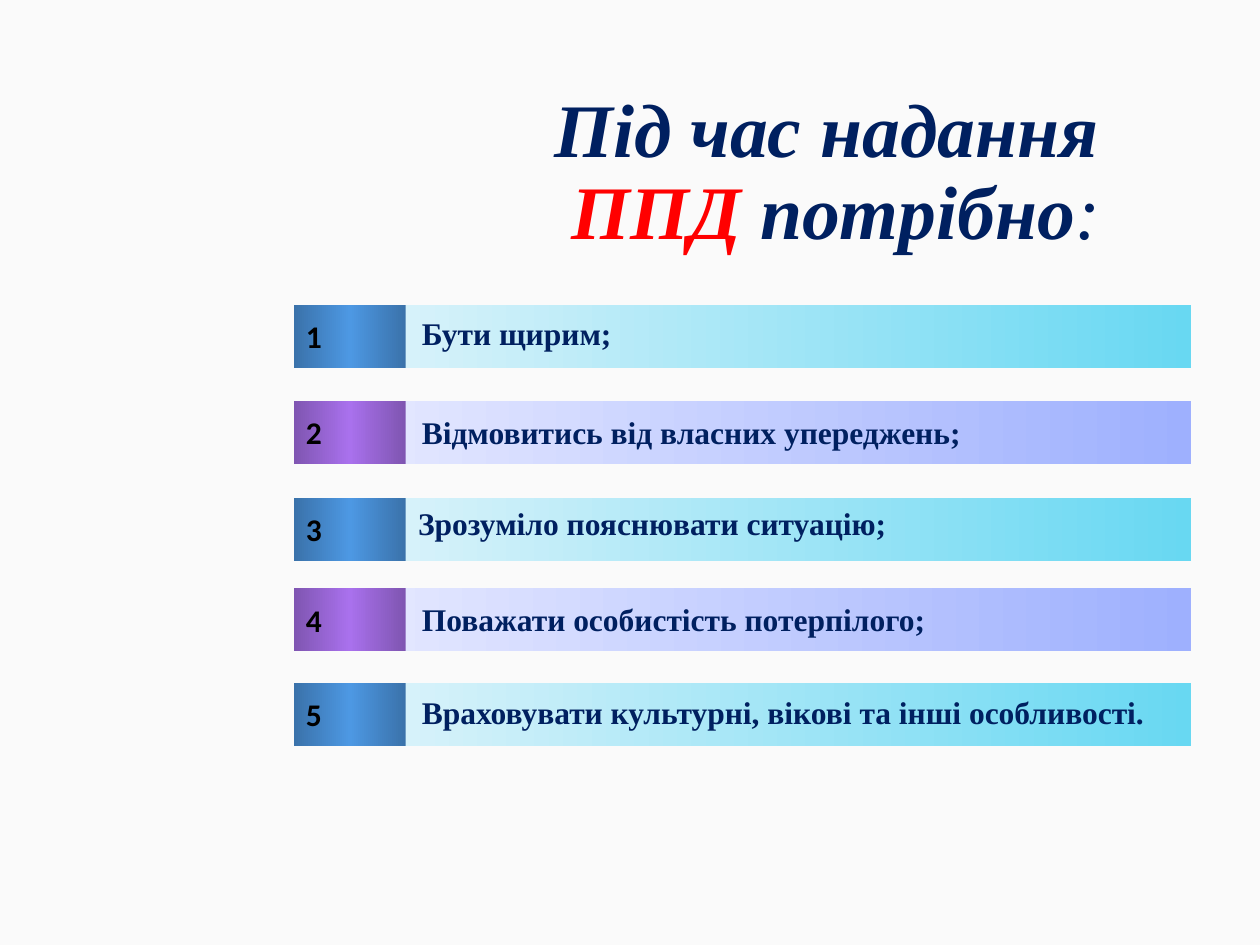
from copy import deepcopy
from dataclasses import dataclass

from pptx import Presentation
from pptx.dml.color import RGBColor
from pptx.enum.shapes import MSO_SHAPE as Shape
from pptx.enum.text import MSO_ANCHOR as Anchor, MSO_AUTO_SIZE as AutoSize, PP_ALIGN as Align
from pptx.oxml.ns import qn
from pptx.util import Inches, Pt

BACKGROUND = RGBColor(0xFA, 0xFA, 0xFA)
NAVY = RGBColor(0x00, 0x20, 0x60)
RED = RGBColor(0xFF, 0x00, 0x00)
BLACK = RGBColor(0x00, 0x00, 0x00)
CYAN_BAR = (RGBColor(0xD8, 0xF2, 0xFA), RGBColor(0x68, 0xD8, 0xF2))
LILAC_BAR = (RGBColor(0xE2, 0xE6, 0xFF), RGBColor(0x9E, 0xB0, 0xFE))
BLUE_EDGE, BLUE_MIDDLE = RGBColor(0x3A, 0x72, 0xAA), RGBColor(0x4D, 0x98, 0xE3)
PURPLE_EDGE, PURPLE_MIDDLE = RGBColor(0x7F, 0x55, 0xB1), RGBColor(0xA9, 0x71, 0xED)
BLUE_BADGE = (BLUE_EDGE, BLUE_MIDDLE, BLUE_EDGE)
PURPLE_BADGE = (PURPLE_EDGE, PURPLE_MIDDLE, PURPLE_EDGE)
THEMES = ((CYAN_BAR, BLUE_BADGE), (LILAC_BAR, PURPLE_BADGE))

SERIF = "Times New Roman"
TITLE_FORMAT = {"name": SERIF, "size": Pt(43.2), "bold": True, "italic": True}
NUMBER_FORMAT = {"name": "Calibri", "size": Pt(18), "bold": True}
RULE_FORMAT = {"name": SERIF, "size": Pt(18), "bold": True}

BAR_LEFT, BAR_WIDTH = 3.11, 6.34
BADGE_LEFT, BADGE_WIDTH = 2.33, 0.89
ROW_HEIGHT, RULE_HEIGHT = 0.5, 0.4


@dataclass
class Rule:
    text: str
    top: float
    text_top: float
    text_left: float = 3.25
    text_width: float = 6.37


RULES = (
    Rule("Бути щирим;", 2.42, 2.44, text_width=4.42),
    Rule("Відмовитись від власних упереджень;", 3.18, 3.23),
    Rule("Зрозуміло пояснювати ситуацію;", 3.95, 3.95, text_left=3.22),
    Rule("Поважати особистість потерпілого;", 4.67, 4.71),
    Rule("Враховувати культурні, вікові та інші особливості.", 5.42, 5.45, text_width=6.21),
)


def add_run(paragraph, text: str, color: RGBColor, font_format: dict) -> None:
    run = paragraph.add_run()
    run.text = text
    for attribute, value in font_format.items():
        setattr(run.font, attribute, value)
    run.font.color.rgb = color


def add_gradient_rect(group, left: float, top: float, width: float, colors: tuple):
    """Add a borderless bar whose colours are evenly spread from left to right."""
    rect = group.shapes.add_shape(
        Shape.RECTANGLE, Inches(left), Inches(top), Inches(width), Inches(ROW_HEIGHT))
    rect.shadow.inherit = False
    rect.line.fill.background()
    rect.fill.gradient()
    rect.fill.gradient_angle = 0
    stop_list = rect.element.find(".//" + qn("a:gsLst"))
    while len(stop_list) < len(colors):
        stop_list.append(deepcopy(stop_list[0]))
    for index, (stop, color) in enumerate(zip(rect.fill.gradient_stops, colors)):
        stop.color.rgb = color
        stop.position = index / (len(colors) - 1)
    return rect


def add_numbered_bar(slide, number: int, rule: Rule) -> None:
    bar_colors, badge_colors = THEMES[(number - 1) % len(THEMES)]
    group = slide.shapes.add_group_shape()
    add_gradient_rect(group, BAR_LEFT, rule.top, BAR_WIDTH, bar_colors)
    badge = add_gradient_rect(group, BADGE_LEFT, rule.top, BADGE_WIDTH, badge_colors)
    frame = badge.text_frame
    frame.word_wrap = False
    frame.vertical_anchor = Anchor.MIDDLE
    frame.paragraphs[0].alignment = Align.LEFT
    add_run(frame.paragraphs[0], str(number), BLACK, NUMBER_FORMAT)


def add_rule_text(slide, rule: Rule) -> None:
    box = slide.shapes.add_textbox(
        Inches(rule.text_left), Inches(rule.text_top),
        Inches(rule.text_width), Inches(RULE_HEIGHT))
    frame = box.text_frame
    frame.word_wrap = True
    frame.auto_size = AutoSize.SHAPE_TO_FIT_TEXT
    add_run(frame.paragraphs[0], rule.text, NAVY, RULE_FORMAT)


def fill_title(title) -> None:
    title.left, title.top = Inches(3.65), Inches(0.69)
    title.width, title.height = Inches(5.97), Inches(1.38)
    frame = title.text_frame
    frame.word_wrap = True
    frame.auto_size = AutoSize.NONE
    frame.vertical_anchor = Anchor.MIDDLE
    heading = frame.paragraphs[0]
    heading.alignment = Align.CENTER
    heading.line_spacing = 0.9
    add_run(heading, "Під час надання ", NAVY, TITLE_FORMAT)
    heading.add_line_break()
    add_run(heading, "ППД", RED, TITLE_FORMAT)
    add_run(heading, " потрібно", NAVY, TITLE_FORMAT)
    add_run(heading, ":", NAVY, {**TITLE_FORMAT, "bold": False})


def main() -> None:
    presentation = Presentation()
    presentation.slide_width, presentation.slide_height = Inches(10), Inches(7.5)
    slide = presentation.slides.add_slide(presentation.slide_layouts.get_by_name("Title Only"))
    slide.background.fill.solid()
    slide.background.fill.fore_color.rgb = BACKGROUND
    fill_title(slide.shapes.title)
    for number, rule in enumerate(RULES, start=1):
        add_numbered_bar(slide, number, rule)
    for rule in RULES:
        add_rule_text(slide, rule)
    presentation.save("out.pptx")


if __name__ == "__main__":
    main()
